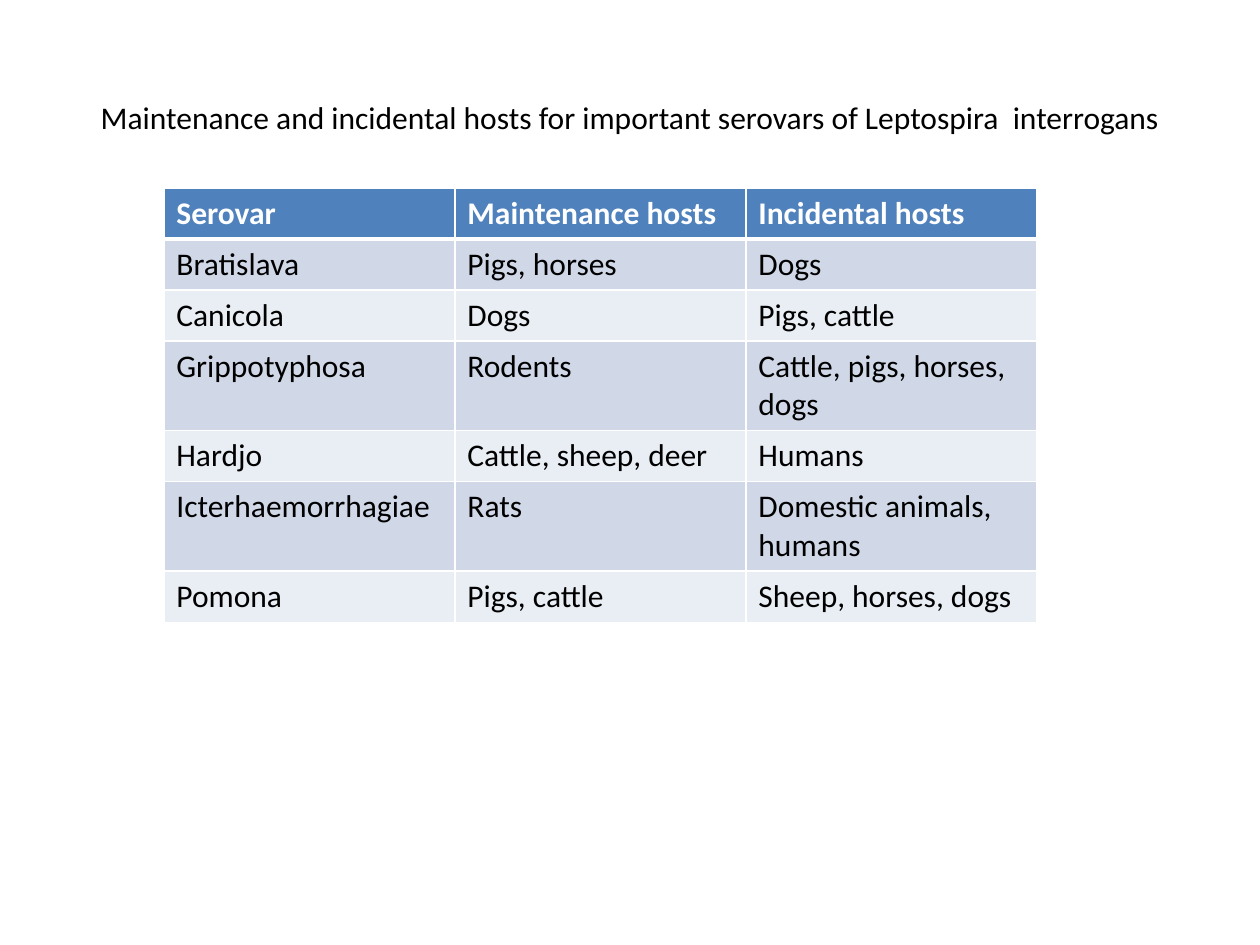
"""Build a slide with a table of Leptospira serovars and their hosts."""
from dataclasses import dataclass

from lxml import etree
from pptx import Presentation
from pptx import util as u
from pptx.dml.color import RGBColor
from pptx.enum import text
from pptx.oxml import ns


@dataclass(frozen=True)
class Theme:
    font: str = "Calibri"
    size: int = 18
    ink: str = "000000"
    light: str = "FFFFFF"
    head: str = "4F81BD"
    bands: tuple = ("D0D8E8", "E9EDF4")
    thin: int = 1
    thick: int = 3


THEME = Theme()
TITLE = "Maintenance and incidental hosts for important serovars of Leptospira  interrogans"
HOSTS = [
    ("Serovar", "Maintenance hosts", "Incidental hosts"),
    ("Bratislava", "Pigs, horses", "Dogs"),
    ("Canicola", "Dogs", "Pigs, cattle"),
    ("Grippotyphosa", "Rodents", "Cattle, pigs, horses, dogs"),
    ("Hardjo", "Cattle, sheep, deer", "Humans"),
    ("Icterhaemorrhagiae", "Rats", "Domestic animals, humans"),
    ("Pomona", "Pigs, cattle", "Sheep, horses, dogs"),
]
TALL = (3, 5)


def style(para, color, bold=False):
    font = para.font
    font.name, font.size, font.bold = THEME.font, u.Pt(THEME.size), bold
    font.color.rgb = RGBColor.from_string(color)


def add_title(slide):
    title = slide.shapes.title
    title.left, title.top = u.Inches(0.5), u.Inches(0.3)
    title.width, title.height = u.Inches(9), u.Inches(1.25)
    frame = title.text_frame
    frame.text = TITLE
    frame.vertical_anchor = text.MSO_ANCHOR.MIDDLE
    para = frame.paragraphs[0]
    para.alignment = text.PP_ALIGN.CENTER
    style(para, THEME.ink)


def set_border(cell, side, width):
    props = cell._tc.get_or_add_tcPr()
    line = etree.SubElement(props, ns.qn(f"a:ln{side}"), w=str(u.Pt(width)))
    fill = etree.SubElement(line, ns.qn("a:solidFill"))
    etree.SubElement(fill, ns.qn("a:srgbClr"), val=THEME.light)


def fill_cell(cell, words, row):
    head = row == 0
    cell.text = words
    style(cell.text_frame.paragraphs[0], THEME.light if head else THEME.ink, head)
    edges = {"L": THEME.thin, "R": THEME.thin,
             "T": THEME.thick if row == 1 else THEME.thin,
             "B": THEME.thick if head else THEME.thin}
    for side, width in edges.items():
        set_border(cell, side, width)
    cell.fill.solid()
    color = THEME.head if head else THEME.bands[(row - 1) % 2]
    cell.fill.fore_color.rgb = RGBColor.from_string(color)


def add_hosts(slide):
    frame = slide.shapes.add_table(
        len(HOSTS), len(HOSTS[0]),
        u.Inches(1.3), u.Inches(1.49), u.Inches(6.93), u.Inches(3.4))
    table = frame.table
    for row, words in enumerate(HOSTS):
        table.rows[row].height = u.Inches(0.63 if row in TALL else 0.36)
        for col, word in enumerate(words):
            fill_cell(table.cell(row, col), word, row)


def main():
    deck = Presentation()
    deck.slide_width, deck.slide_height = u.Inches(10), u.Inches(7.5)
    slide = deck.slides.add_slide(deck.slide_layouts[5])
    add_title(slide)
    add_hosts(slide)
    deck.save("out.pptx")


if __name__ == "__main__":
    main()
